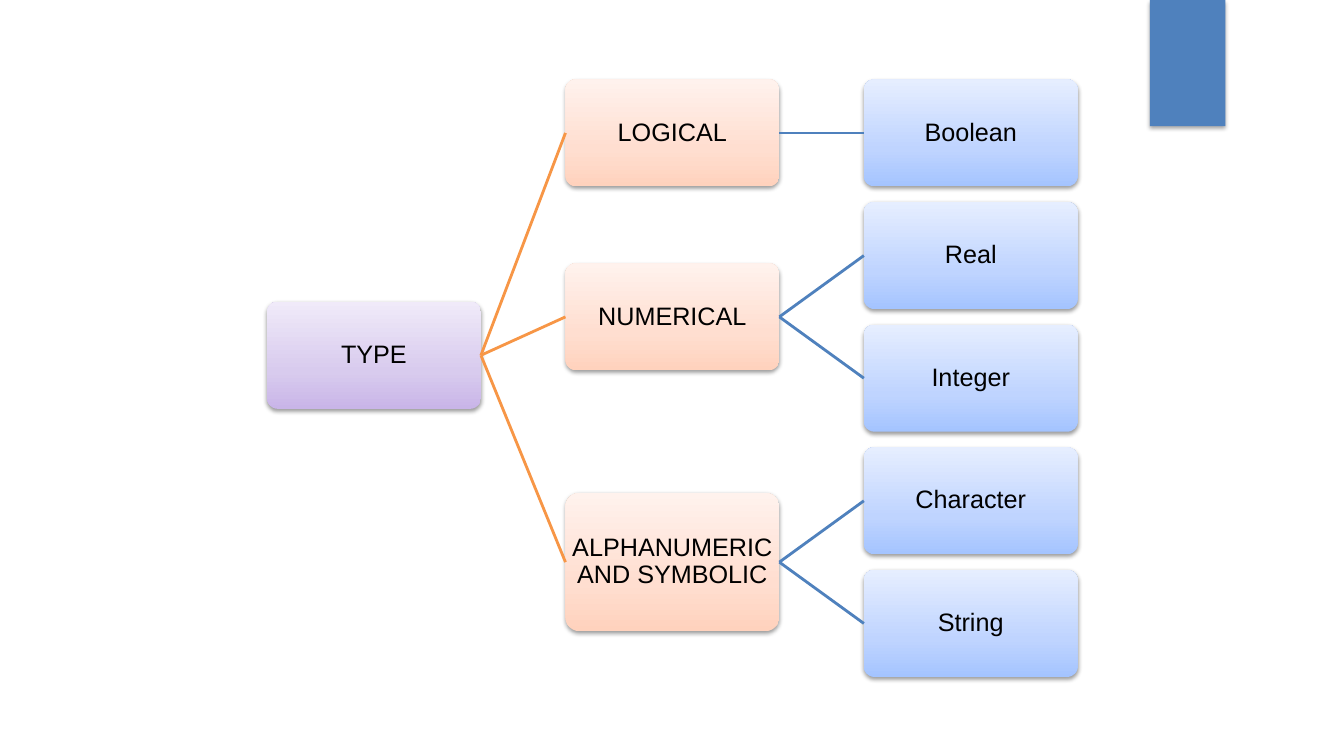
from dataclasses import dataclass

from lxml import etree
from pptx import Presentation
from pptx import util as u
from pptx.dml.color import RGBColor
from pptx.enum import shapes, text
from pptx.oxml.ns import qn


@dataclass(frozen=True)
class Theme:
    font: str = "Arial"
    size: int = 18
    ink: str = "000000"
    bar: str = "4F81BD"
    fills: tuple = (
        ("C9B5E8", "D8CBEE", "F0EAF9"),
        ("FFD2BD", "FFDED0", "FFF2ED"),
        ("A4C4FF", "BFD4FF", "E6EEFF"),
    )
    links: tuple = ("F79646", "4F81BD")


THEME = Theme()
STOPS = (0, 35, 100)
NODE_W, NODE_H, TALL_H = 5.39, 2.7, 3.48
COL_STEP, ROW_STEP = 7.52, 3.09

TREE = ("TYPE", NODE_H, [
    ("LOGICAL", NODE_H, [("Boolean", NODE_H, [])]),
    ("NUMERICAL", NODE_H, [("Real", NODE_H, []), ("Integer", NODE_H, [])]),
    ("ALPHANUMERIC AND SYMBOLIC", TALL_H,
     [("Character", NODE_H, []), ("String", NODE_H, [])]),
])


def add_tag(parent, tag, **attrs):
    return etree.SubElement(parent, qn(tag), {k: str(v) for k, v in attrs.items()})


def add_shade(shape, alpha, dist):
    shape.shadow.inherit = False
    effects = shape._element.spPr.find(qn("a:effectLst"))
    outer = add_tag(effects, "a:outerShdw", blurRad=u.Pt(3.1), dist=u.Pt(dist),
                    dir=5400000, rotWithShape=0)
    tint = add_tag(outer, "a:srgbClr", val=THEME.ink)
    add_tag(tint, "a:alpha", val=alpha * 1000)


def fill_fade(shape, colors):
    shape.fill.gradient()
    shape.fill.gradient_angle = 90
    stops = shape._element.spPr.find(".//" + qn("a:gsLst"))
    for old in list(stops):
        stops.remove(old)
    for place, color in zip(STOPS, colors):
        stop = add_tag(stops, "a:gs", pos=place * 1000)
        add_tag(stop, "a:srgbClr", val=color)


def put_text(shape, words, size=THEME.size, color=THEME.ink, inset=0.03):
    frame = shape.text_frame
    frame.word_wrap = True
    frame.vertical_anchor = text.MSO_ANCHOR.MIDDLE
    frame.margin_left = frame.margin_right = u.Cm(inset)
    frame.margin_top = frame.margin_bottom = u.Cm(inset)
    para = frame.paragraphs[0]
    para.alignment = text.PP_ALIGN.CENTER
    para.line_spacing = 0.9
    run = para.add_run()
    run.text = words
    run.font.name = THEME.font
    run.font.size = u.Pt(size)
    run.font.color.rgb = RGBColor.from_string(color)


def add_bar(slide, left, top, width, height):
    bar = slide.shapes.add_shape(shapes.MSO_SHAPE.RECTANGLE, u.Cm(left), u.Cm(top),
                                 u.Cm(width), u.Cm(height))
    bar.fill.solid()
    bar.fill.fore_color.rgb = RGBColor.from_string(THEME.bar)
    bar.line.fill.background()
    add_shade(bar, alpha=35, dist=1.8)


def add_node(slide, words, left, top, height, level):
    node = slide.shapes.add_shape(shapes.MSO_SHAPE.ROUNDED_RECTANGLE, u.Cm(left),
                                  u.Cm(top), u.Cm(NODE_W), u.Cm(height))
    node.adjustments[0] = 0.1
    fill_fade(node, THEME.fills[level])
    node.line.fill.background()
    add_shade(node, alpha=38, dist=1.6)
    put_text(node, words)
    return node


def add_link(slide, start, end, color):
    link = slide.shapes.add_connector(shapes.MSO_CONNECTOR.STRAIGHT, 0, 0, 0, 0)
    link.begin_connect(start, 3)
    link.end_connect(end, 1)
    link.line.color.rgb = RGBColor.from_string(color)
    link.line.width = u.Pt(2)
    add_tag(link._element.spPr, "a:effectLst")


def add_tree(slide, branch, left, top, level=0):
    words, height, kids = branch
    if not kids:
        return add_node(slide, words, left, top, height, level), 1
    nodes, rows = [], 0
    for kid in kids:
        node, used = add_tree(slide, kid, left + COL_STEP, top + rows * ROW_STEP,
                              level + 1)
        nodes.append(node)
        rows += used
    first, last = nodes[0], nodes[-1]
    middle = u.Emu((first.top + last.top + last.height) // 2).cm
    root = add_node(slide, words, left, middle - height / 2, height, level)
    for node in nodes:
        add_link(slide, root, node, THEME.links[level])
    return root, rows


def main():
    deck = Presentation()
    deck.slide_width, deck.slide_height = u.Cm(33.87), u.Cm(19.05)
    slide = deck.slides.add_slide(deck.slide_layouts[6])
    add_bar(slide, 28.98, 0, 1.9, 3.18)
    add_tree(slide, TREE, 6.73, 2)
    deck.save("out.pptx")


if __name__ == "__main__":
    main()
